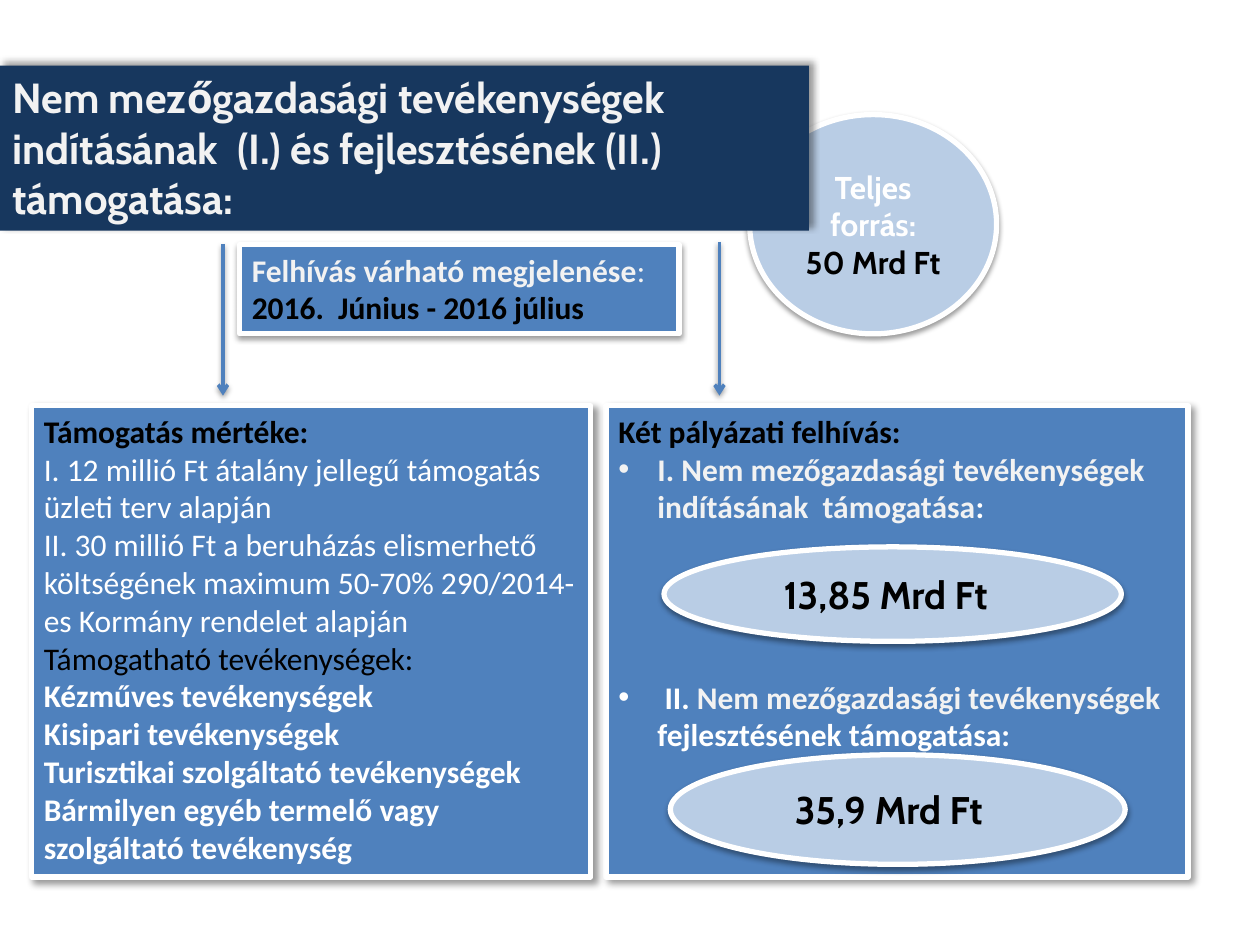
from dataclasses import dataclass

from lxml.etree import SubElement
from pptx import Presentation
from pptx.dml.color import RGBColor
from pptx.enum.shapes import MSO_CONNECTOR, MSO_SHAPE
from pptx.enum.text import MSO_ANCHOR, MSO_AUTO_SIZE, PP_ALIGN
from pptx.oxml.ns import qn
from pptx.util import Inches, Pt

COLOURS = {
    "white": "FFFFFF",
    "pale": "F2F2F2",
    "black": "000000",
    "blue": "4F81BD",
    "light": "B9CDE5",
    "navy": "17375E",
}


@dataclass
class Run:
    text: str
    colour: str = "white"
    bold: bool = True


@dataclass
class Line:
    runs: list[Run]
    bullet: bool = False
    space_before: float = 0


@dataclass
class Shadow:
    opacity: int
    blur: float
    distance: float
    angle: int


@dataclass
class Box:
    left: float
    top: float
    width: float
    height: float
    fill: str
    shadow: Shadow
    preset: MSO_SHAPE = MSO_SHAPE.RECTANGLE
    outlined: bool = True


SOFT = Shadow(38, 3.1, 1.6, 90)
CORNER = Shadow(40, 4, 3, 45)
UPWARD = Shadow(40, 4, 3, 315)


def colour_of(name: str) -> RGBColor:
    return RGBColor.from_string(COLOURS[name])


def add_shadow(properties, shadow: Shadow) -> None:
    effects = properties.find(qn("a:effectLst"))
    if effects is None:
        effects = SubElement(properties, qn("a:effectLst"))
    outer = SubElement(
        effects, qn("a:outerShdw"),
        blurRad=str(Pt(shadow.blur)), dist=str(Pt(shadow.distance)),
        dir=str(shadow.angle * 60000), algn="ctr", rotWithShape="0",
    )
    colour = SubElement(outer, qn("a:srgbClr"), val=COLOURS["black"])
    SubElement(colour, qn("a:alpha"), val=str(shadow.opacity * 1000))


def add_box(slide, box: Box):
    shape = slide.shapes.add_shape(
        box.preset, Inches(box.left), Inches(box.top), Inches(box.width), Inches(box.height)
    )
    shape.fill.solid()
    shape.fill.fore_color.rgb = colour_of(box.fill)
    if box.outlined:
        shape.line.color.rgb = colour_of("white")
        shape.line.width = Pt(3)
    else:
        shape.line.fill.background()
    shape.shadow.inherit = False
    add_shadow(shape._element.spPr, box.shadow)
    return shape


def write_text(shape, lines: list[Line], size: float = 18, font: str = "Calibri",
               centred: bool = False, wrap: bool = True) -> None:
    frame = shape.text_frame
    frame.word_wrap = wrap
    frame.auto_size = MSO_AUTO_SIZE.NONE if centred else MSO_AUTO_SIZE.SHAPE_TO_FIT_TEXT
    frame.vertical_anchor = MSO_ANCHOR.MIDDLE if centred else MSO_ANCHOR.TOP
    for index, line in enumerate(lines):
        paragraph = frame.add_paragraph() if index else frame.paragraphs[0]
        paragraph.alignment = PP_ALIGN.CENTER if centred else PP_ALIGN.LEFT
        if line.space_before:
            paragraph.space_before = Pt(line.space_before)
        if line.bullet:
            properties = paragraph._p.get_or_add_pPr()
            properties.set("marL", str(Inches(0.31)))
            properties.set("indent", str(Inches(-0.31)))
            SubElement(properties, qn("a:buFont"), typeface="Arial")
            SubElement(properties, qn("a:buChar"), char="•")
        for part in line.runs:
            run = paragraph.add_run()
            run.text = part.text
            run.font.name = font
            run.font.size = Pt(size)
            run.font.bold = part.bold
            run.font.color.rgb = colour_of(part.colour)


def add_arrow(slide, x: float, top: float, bottom: float) -> None:
    arrow = slide.shapes.add_connector(
        MSO_CONNECTOR.STRAIGHT, Inches(x), Inches(top), Inches(x), Inches(bottom)
    )
    arrow.line.color.rgb = colour_of("blue")
    arrow.line.width = Pt(2)
    SubElement(arrow.line._get_or_add_ln(), qn("a:tailEnd"), type="arrow")
    add_shadow(arrow._element.spPr, SOFT)


def add_amount(slide, text: str, left: float, top: float, width: float) -> None:
    label = slide.shapes.add_textbox(Inches(left), Inches(top), Inches(width), Inches(0.47))
    write_text(label, [Line([Run(text, "black")])], 22, "Cabin", wrap=False)


def main() -> None:
    presentation = Presentation()
    presentation.slide_width, presentation.slide_height = Inches(10), Inches(7.5)
    slide = presentation.slides.add_slide(presentation.slide_layouts[6])

    # Total funding circle
    total = add_box(slide, Box(5.95, 0.91, 1.96, 1.74, "light", SOFT, MSO_SHAPE.OVAL))
    write_text(total, [Line([Run("Teljes forrás:")]), Line([Run("50 Mrd Ft", "black")])],
               font="Cabin", centred=True)

    # Two calls for proposals; the gap leaves room for the first amount
    calls = add_box(slide, Box(4.81, 3.22, 4.62, 3.74, "blue", CORNER))
    write_text(calls, [
        Line([Run("Két pályázati felhívás:", "black")]),
        Line([Run("I. Nem mezőgazdasági tevékenységek  indításának  támogatása", "pale"),
              Run(":")], bullet=True),
        Line([Run(" II. "), Run("Nem mezőgazdasági tevékenységek ", "pale"),
              Run("fejlesztésének támogatása:")], bullet=True, space_before=87),
    ])

    # Expected publication date
    date = add_box(slide, Box(1.9, 1.94, 3.49, 0.71, "blue", SOFT))
    write_text(date, [
        Line([Run("Felhívás várható megjelenése", "pale"), Run(":", "pale", False)]),
        Line([Run("2016.  Június - 2016 július", "black")]),
    ])

    # Support rates and eligible activities
    rates = add_box(slide, Box(0.25, 3.22, 4.44, 3.74, "blue", CORNER))
    activities = [
        "Kézműves tevékenységek",
        "Kisipari tevékenységek",
        "Turisztikai szolgáltató tevékenységek",
        "Bármilyen egyéb termelő vagy szolgáltató tevékenység",
    ]
    write_text(rates, [
        Line([Run("Támogatás mértéke:", "black")]),
        Line([Run("I. 12 millió Ft átalány jellegű támogatás üzleti terv alapján", bold=False)]),
        Line([Run("II. 30 millió Ft a beruházás elismerhető költségének maximum "
                  "50-70% 290/2014-es Kormány rendelet alapján", bold=False)]),
        Line([Run("Támogatható tevékenységek:", "black", False)]),
        *[Line([Run(activity)]) for activity in activities],
    ])

    # Arrows down to the panels
    add_arrow(slide, 1.77, 1.94, 3.14)
    add_arrow(slide, 5.71, 1.92, 3.14)

    # Amount of each call
    add_box(slide, Box(5.27, 4.34, 3.63, 0.75, "light", SOFT, MSO_SHAPE.OVAL))
    add_box(slide, Box(5.32, 5.99, 3.61, 0.87, "light", SOFT, MSO_SHAPE.OVAL))
    add_amount(slide, "13,85 Mrd Ft", 6.12, 4.48, 2.01)
    add_amount(slide, "35,9 Mrd Ft", 6.21, 6.19, 1.83)

    # Title banner
    title = add_box(slide, Box(0, 0.52, 6.42, 1.31, "navy", UPWARD, outlined=False))
    write_text(title, [Line([Run("Nem mezőgazdasági tevékenységek  indításának  (I.) és "
                                 "fejlesztésének (II.) támogatása:", "pale")])], 24, "Cabin")

    presentation.save("out.pptx")


if __name__ == "__main__":
    main()
